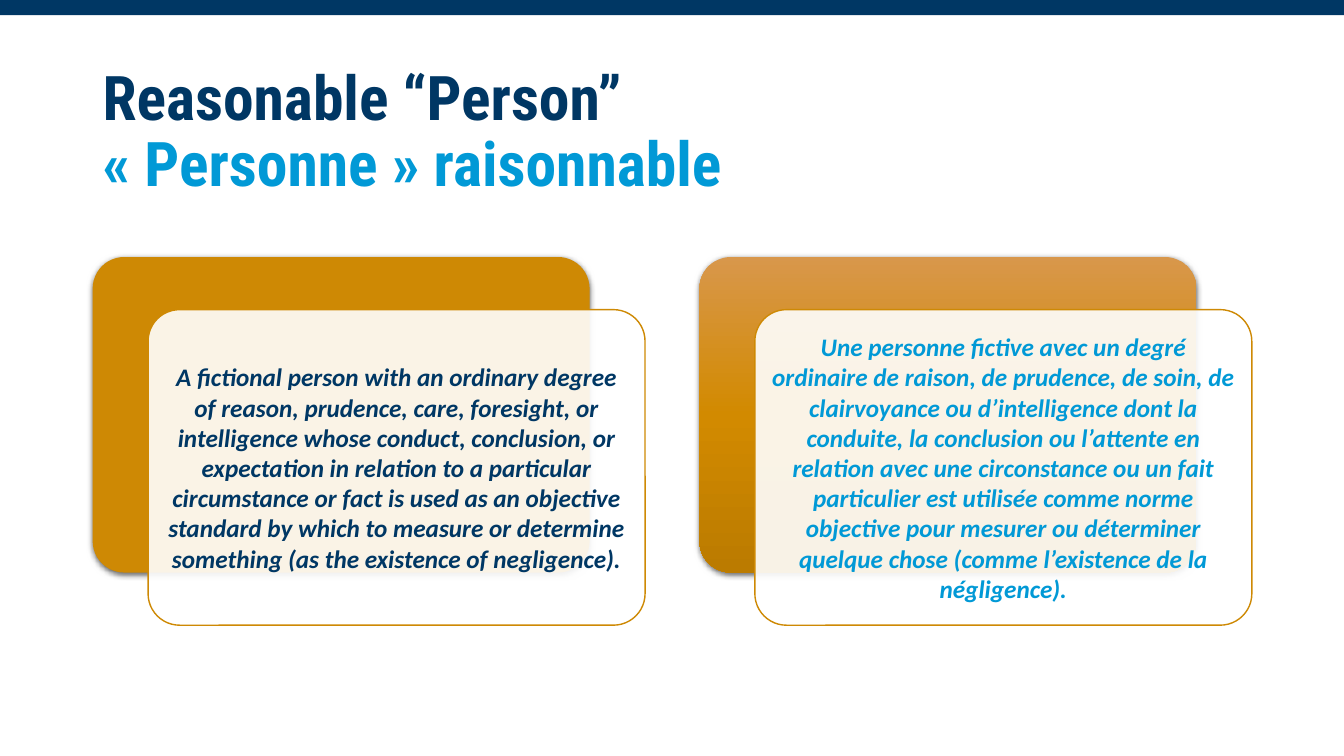
from lxml.etree import SubElement
from pptx import Presentation
from pptx.dml.color import RGBColor
from pptx.enum.shapes import MSO_SHAPE as Preset
from pptx.enum.text import MSO_ANCHOR as Anchor, PP_ALIGN as Align
from pptx.oxml import parse_xml
from pptx.oxml.ns import nsdecls, qn
from pptx.util import Pt

COLORS = {
    "navy": "003764",
    "sky": "0199D6",
    "ochre": "CE8904",
    "white": "FFFFFF",
    "black": "000000",
    "ochre_light": "D8974B",
    "ochre_mid": "D28A00",
    "ochre_dark": "BB7B00",
}
OCHRE_FADE = [(0, "ochre_light"), (50, "ochre_mid"), (100, "ochre_dark")]

DEFINITIONS = [
    ("A fictional person with an ordinary degree of reason, prudence, care, "
     "foresight, or intelligence whose conduct, conclusion, or expectation in "
     "relation to a particular circumstance or fact is used as an objective "
     "standard by which to measure or determine something (as the existence "
     "of negligence).", "navy", None),
    ("Une personne fictive avec un degré ordinaire de raison, de prudence, de "
     "soin, de clairvoyance ou d’intelligence dont la conduite, la conclusion "
     "ou l’attente en relation avec une circonstance ou un fait particulier "
     "est utilisée comme norme objective pour mesurer ou déterminer quelque "
     "chose (comme l’existence de la négligence).", "sky", OCHRE_FADE),
]

PANEL_LEFT, PANEL_TOP = 66.2, 183.6
PANEL_SIZE = (355, 225.4)
PANEL_PITCH = 433.4
CARD_SHIFT_X, CARD_SHIFT_Y = 39.6, 37.6


def rgb(name):
    return RGBColor.from_string(COLORS[name])


class SlideBuilder:
    title_font = "Roboto Condensed"
    body_font = "Calibri"

    def __init__(self, slide):
        self.slide = slide

    def block(self, preset, left, top, width, height, color):
        block = self.slide.shapes.add_shape(
            preset, Pt(left), Pt(top), Pt(width), Pt(height))
        block.shadow.inherit = False
        block.fill.solid()
        block.fill.fore_color.rgb = rgb(color)
        block.line.fill.background()
        return block

    def rounded(self, left, top, color):
        rounded = self.block(Preset.ROUNDED_RECTANGLE, left, top, *PANEL_SIZE, color)
        rounded.adjustments[0] = 0.1
        return rounded

    def style_run(self, run, font, size, color, italic=None):
        run.font.name = font
        run.font.size = Pt(size)
        run.font.bold = True
        run.font.italic = italic
        run.font.color.rgb = rgb(color)

    def title(self, left, top, width, height, lines):
        title = self.slide.shapes.add_textbox(
            Pt(left), Pt(top), Pt(width), Pt(height))
        frame = title.text_frame
        frame.word_wrap = True
        frame.vertical_anchor = Anchor.MIDDLE
        heading = frame.paragraphs[0]
        heading.text = "\v".join(text for text, _ in lines)
        heading.line_spacing = 0.9
        for run, (_, color) in zip(heading.runs, lines):
            self.style_run(run, self.title_font, 44, color)

    def panel(self, left, top, fade):
        panel = self.rounded(left, top, "ochre")
        properties = panel.element.spPr
        if fade:
            stops = "".join(
                f'<a:gs pos="{place * 1000}"><a:srgbClr val="{COLORS[color]}"/></a:gs>'
                for place, color in fade)
            gradient = parse_xml(
                f'<a:gradFill {nsdecls("a")} rotWithShape="1"><a:gsLst>{stops}</a:gsLst>'
                '<a:lin ang="5400000" scaled="0"/></a:gradFill>')
            properties.replace(properties.find(qn("a:solidFill")), gradient)
        shadow = SubElement(
            properties.find(qn("a:effectLst")), qn("a:outerShdw"),
            blurRad=str(Pt(4.5)), dist=str(Pt(1.5)), dir="5400000",
            algn="ctr", rotWithShape="0")
        tint = SubElement(shadow, qn("a:srgbClr"), val=COLORS["black"])
        SubElement(tint, qn("a:alpha"), val="63000")

    def card(self, left, top, text, color):
        card = self.rounded(left, top, "white")
        white = card.element.spPr.find(qn("a:solidFill"))[0]
        SubElement(white, qn("a:alpha"), val="90000")
        card.line.color.rgb = rgb("ochre")
        card.line.width = Pt(1)
        frame = card.text_frame
        frame.word_wrap = True
        frame.vertical_anchor = Anchor.MIDDLE
        frame.margin_left = frame.margin_right = Pt(5)
        frame.margin_top = frame.margin_bottom = Pt(5)
        definition = frame.paragraphs[0]
        definition.text = text
        definition.alignment = Align.CENTER
        self.style_run(definition.runs[0], self.body_font, 18, color, italic=True)


def main():
    deck = Presentation()
    deck.slide_width, deck.slide_height = Pt(960), Pt(540)
    builder = SlideBuilder(deck.slides.add_slide(deck.slide_layouts[6]))

    builder.block(Preset.RECTANGLE, 0, 0, 960, 10.8, "navy")
    builder.title(66.2, 28.8, 700, 133.2, [
        ("Reasonable “Person”", "navy"),
        ("« Personne » raisonnable", "sky"),
    ])
    for column, (text, color, fade) in enumerate(DEFINITIONS):
        left = PANEL_LEFT + column * PANEL_PITCH
        builder.panel(left, PANEL_TOP, fade)
        builder.card(left + CARD_SHIFT_X, PANEL_TOP + CARD_SHIFT_Y, text, color)

    deck.save("out.pptx")


if __name__ == "__main__":
    main()
